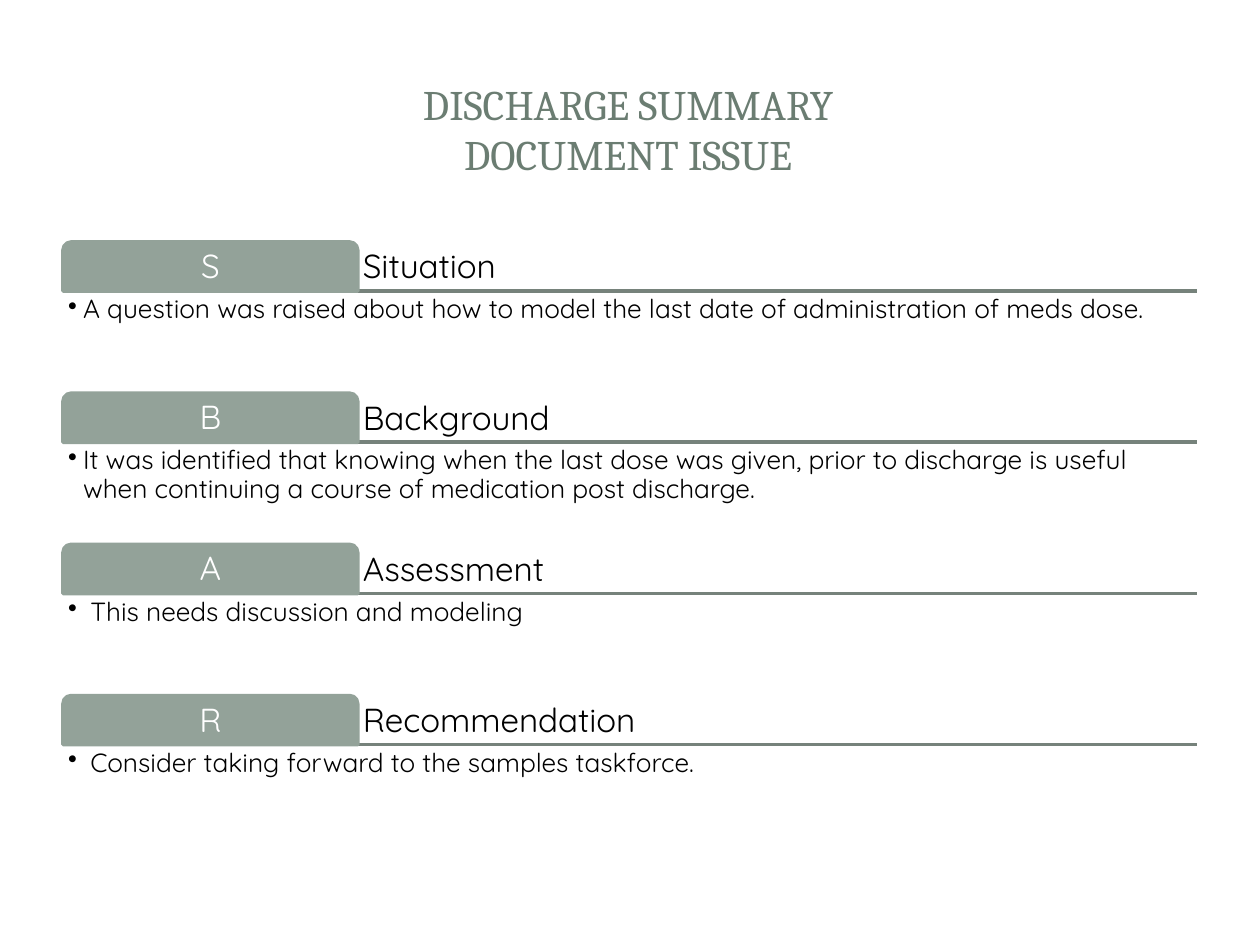
import pptx
import pptx.util
import pptx.dml.color
import pptx.enum.shapes
import pptx.enum.text
import pptx.oxml.ns
from lxml import etree

Inches = pptx.util.Inches
Pt = pptx.util.Pt
Align = pptx.enum.text.PP_ALIGN
Anchor = pptx.enum.text.MSO_ANCHOR
qn = pptx.oxml.ns.qn

COLORS = {
    "title": "6B7D72",
    "tab": "93A299",
    "rule": "76827B",
    "text": "000000",
    "light": "FFFFFF",
}
LEFT, WIDTH = 0.5, 9
TAB_W, TAB_H = 2.34, 0.39
BODY_H = 0.79
TOP, STEP = 1.92, 1.2
ROWS = [
    ("Situation",
     "A question was raised about how to model the last date of "
     "administration of meds dose."),
    ("Background",
     "It was identified that knowing when the last dose was given, prior to "
     "discharge is useful when continuing a course of medication post "
     "discharge."),
    ("Assessment", " This needs discussion and modeling"),
    ("Recommendation", " Consider taking forward to the samples taskforce."),
]


def color(name):
    return pptx.dml.color.RGBColor.from_string(COLORS[name])


def write(shape, text, size=19, font="Quicksand", ink="text", align=Align.LEFT,
          anchor=Anchor.MIDDLE, inset=0.04, line=0.9, after=0, bullet=False):
    """Fill a shape with one formatted paragraph."""
    frame = shape.text_frame
    frame.word_wrap = True
    frame.vertical_anchor = anchor
    frame.margin_left = frame.margin_right = Inches(inset)
    frame.margin_top = frame.margin_bottom = Inches(0.04)
    para = frame.paragraphs[0]
    para.text = text
    para.alignment = align
    para.line_spacing = line
    para.space_after = Pt(after)
    for run in para.runs:
        run.font.size = Pt(size)
        run.font.name = font
        run.font.color.rgb = color(ink)
    if bullet:
        para.level = 1
        props = para._p.get_or_add_pPr()
        props.set("marL", str(Inches(0.12)))
        props.set("indent", str(-Inches(0.12)))
        etree.SubElement(props, qn("a:buChar")).set("char", "•")


def add_text(slide, x, y, w, h, text, **style):
    box = slide.shapes.add_textbox(Inches(x), Inches(y), Inches(w), Inches(h))
    write(box, text, **style)


def add_rule(slide, y):
    rule = slide.shapes.add_connector(
        pptx.enum.shapes.MSO_CONNECTOR.STRAIGHT,
        Inches(LEFT), Inches(y), Inches(LEFT + WIDTH), Inches(y))
    rule.line.color.rgb = color("rule")
    rule.line.width = Pt(2)
    etree.SubElement(rule._element.spPr, qn("a:effectLst"))


def add_tab(slide, y, letter):
    tab = slide.shapes.add_shape(
        pptx.enum.shapes.MSO_SHAPE.ROUND_2_SAME_RECTANGLE,
        Inches(LEFT), Inches(y), Inches(TAB_W), Inches(TAB_H))
    tab.adjustments[0] = 0.167
    tab.adjustments[1] = 0
    tab.shadow.inherit = False
    tab.fill.solid()
    tab.fill.fore_color.rgb = color("tab")
    tab.line.color.rgb = color("tab")
    tab.line.width = Pt(2)
    write(tab, letter, ink="light", align=Align.CENTER)


def add_row(slide, y, head, body):
    base = y + TAB_H
    add_rule(slide, base)
    add_text(slide, LEFT + TAB_W, y, WIDTH - TAB_W, TAB_H, head,
             anchor=Anchor.BOTTOM, after=6.65)
    add_tab(slide, y, head[0])
    add_text(slide, LEFT, base, WIDTH, BODY_H, body, size=15,
             anchor=Anchor.TOP, after=2.25, bullet=True)


def main():
    deck = pptx.Presentation()
    deck.slide_width, deck.slide_height = Inches(10), Inches(7.5)
    slide = deck.slides.add_slide(deck.slide_layouts[6])
    add_text(slide, 0.47, 0.45, 9.03, 1.14,
             "DISCHARGE SUMMARY\vDOCUMENT ISSUE", size=24, font="Cambria",
             ink="title", align=Align.CENTER, inset=0.1, line=1.0)
    for i, (head, body) in enumerate(ROWS):
        add_row(slide, TOP + i * STEP, head, body)
    deck.save("out.pptx")


if __name__ == "__main__":
    main()
